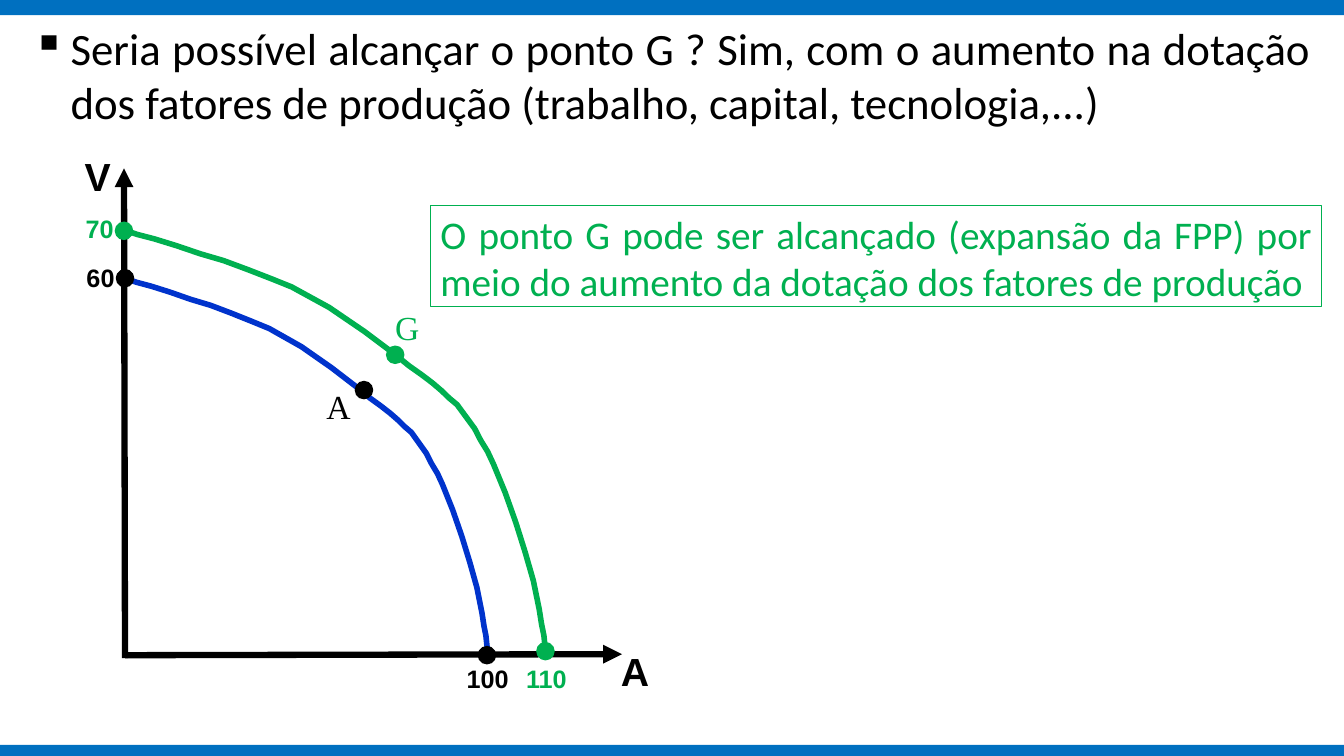
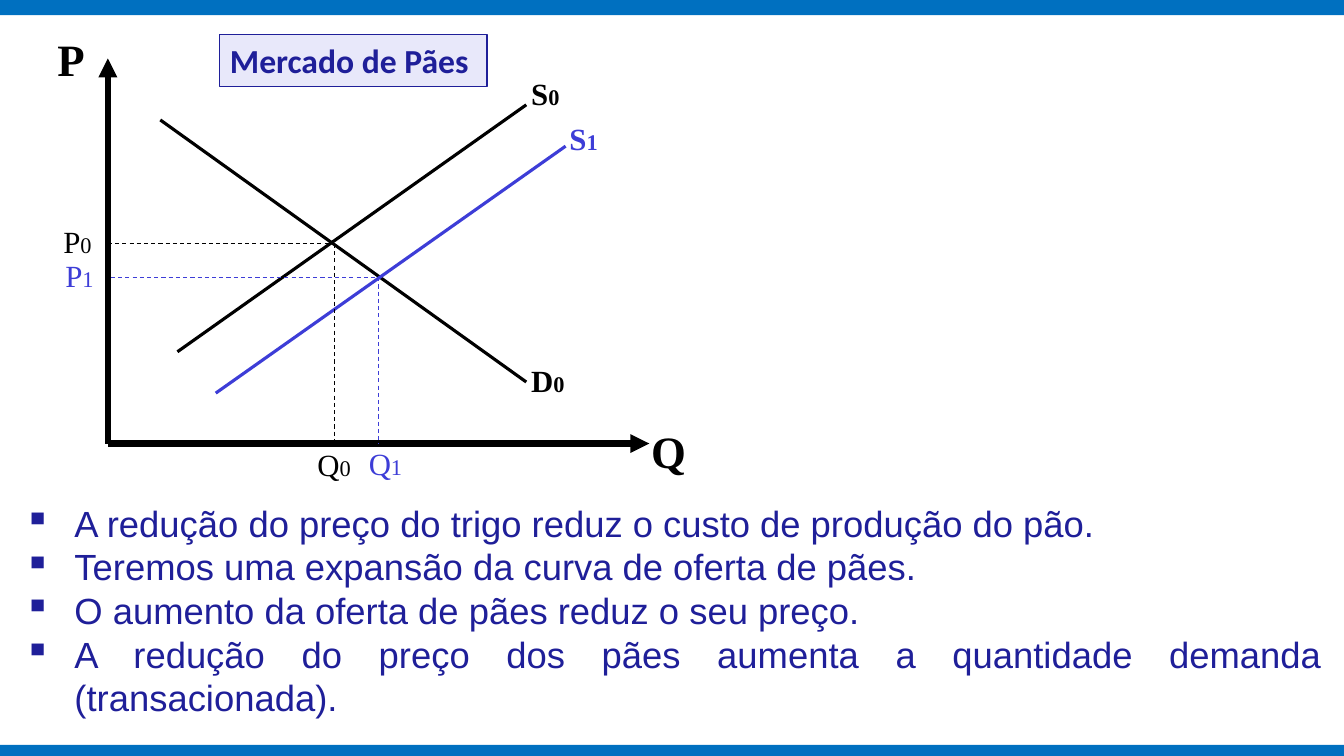
from lxml.etree import SubElement
from pptx import Presentation
from pptx.dml.color import RGBColor
from pptx.enum.dml import MSO_LINE
from pptx.enum.shapes import MSO_CONNECTOR, MSO_SHAPE
from pptx.enum.text import MSO_ANCHOR, MSO_AUTO_SIZE, PP_ALIGN
from pptx.oxml.ns import qn
from pptx.util import Inches, Pt

COLORS = {
    "band": "0070C0",
    "black": "000000",
    "green": "00B050",
    "curve": "0033CC",
    "shifted": "3D3DD7",
    "navy": "1F1F99",
    "pale": "E8E8FA",
}
SERIF = "Times New Roman"
TITLE_ONLY = 5
DOT_SIZE = 0.17

# Production frontier; the expanded one has the same outline in a larger frame.
FRONTIER = [
    (1.24, 2.76), (1.35, 2.8), (1.5, 2.84), (1.69, 2.9), (1.89, 2.97),
    (2.09, 3.03), (2.3, 3.11), (2.5, 3.19), (2.67, 3.26), (2.99, 3.44),
    (3.29, 3.65), (3.42, 3.75), (3.55, 3.85), (3.67, 3.95), (3.78, 4.03),
    (3.87, 4.1), (3.95, 4.17), (4.01, 4.23), (4.08, 4.29), (4.18, 4.43),
    (4.23, 4.5), (4.28, 4.6), (4.34, 4.7), (4.39, 4.81), (4.49, 5.06),
    (4.58, 5.32), (4.66, 5.58), (4.73, 5.83), (4.78, 6.08), (4.8, 6.21),
    (4.82, 6.31), (4.83, 6.41), (4.85, 6.49),
]


def color(name):
    return RGBColor.from_string(COLORS[name])


def paint(shape, fill=None, line=None, width=1):
    shape.shadow.inherit = False
    if fill:
        shape.fill.solid()
        shape.fill.fore_color.rgb = color(fill)
    else:
        shape.fill.background()
    if line:
        shape.line.color.rgb = color(line)
        shape.line.width = Pt(width)
    else:
        shape.line.fill.background()


def place(shape, left, top, width, height):
    shape.left, shape.top = Inches(left), Inches(top)
    shape.width, shape.height = Inches(width), Inches(height)


def add_box(page, frame, fill=None, line=None, preset=MSO_SHAPE.RECTANGLE):
    box = page.shapes.add_shape(preset, *map(Inches, frame))
    paint(box, fill, line)
    return box


def prepare_text(shape, anchor=MSO_ANCHOR.TOP):
    text = shape.text_frame
    text.word_wrap = True
    text.auto_size = MSO_AUTO_SIZE.NONE
    text.vertical_anchor = anchor
    return text


def add_span(para, words, size, font, ink, bold=False):
    span = para.add_run()
    span.text = words
    span.font.size = Pt(size)
    span.font.name = font
    span.font.bold = bold
    span.font.color.rgb = color(ink)


def add_bullet(para, indent):
    properties = para._p.get_or_add_pPr()
    properties.set("marL", str(Inches(indent)))
    properties.set("indent", str(-Inches(indent)))
    SubElement(properties, qn("a:buChar")).set("char", "▪")


def write_statement(shape, words, size, ink, anchor=MSO_ANCHOR.TOP, bold=False):
    para = prepare_text(shape, anchor).paragraphs[0]
    para.alignment = PP_ALIGN.JUSTIFY
    add_span(para, words, size, "Calibri", ink, bold)
    return para


def add_label(page, words, left, top, size, font, ink="black", bold=False,
              index=None):
    """Add a short label, with an optional smaller index after it."""
    box = page.shapes.add_textbox(Inches(left), Inches(top), Inches(0.8), Inches(0.5))
    para = prepare_text(box).paragraphs[0]
    add_span(para, words, size, font, ink, bold)
    if index:
        add_span(para, index, 16, font, ink, bold)


def add_line(page, start, end, ink="black", width=2.25, dashed=False, arrow=False):
    line = page.shapes.add_connector(
        MSO_CONNECTOR.STRAIGHT, *map(Inches, (*start, *end)))
    line.line.color.rgb = color(ink)
    line.line.width = Pt(width)
    if dashed:
        line.line.dash_style = MSO_LINE.DASH
    if arrow:
        SubElement(line.line._get_or_add_ln(), qn("a:tailEnd")).set("type", "triangle")
    SubElement(line._element.spPr, qn("a:effectLst"))


def add_axis(page, start, end):
    add_line(page, start, end, width=4.5, arrow=True)


def add_frontier(page, left, top, width, height, ink):
    """Draw the frontier stretched to the given frame."""
    (first_x, first_y), (last_x, last_y) = FRONTIER[0], FRONTIER[-1]
    points = [
        (Inches(left + (x - first_x) * width / (last_x - first_x)),
         Inches(top + (y - first_y) * height / (last_y - first_y)))
        for x, y in FRONTIER
    ]
    builder = page.shapes.build_freeform(*points[0])
    builder.add_line_segments(points[1:], close=False)
    paint(builder.convert_to_shape(), line=ink, width=4)


def add_dot(page, x, y, ink):
    frame = (x - DOT_SIZE / 2, y - DOT_SIZE / 2, DOT_SIZE, DOT_SIZE)
    add_box(page, frame, ink, ink, MSO_SHAPE.OVAL)


def add_master_bands(deck, page):
    """Make the two bands on a page and move them to the slide master."""
    tree = deck.slide_master.element.cSld.spTree
    for number, (top, height) in enumerate([(-0.03, 0.18), (7.39, 0.13)]):
        band = add_box(page, (0, top, 13.33, height), "band")
        band.name = f"Band {number + 1}"
        band.element.nvSpPr.cNvPr.set("id", str(100 + number))
        tree.append(band.element)


def build_frontier_page(page):
    place(page.shapes.title, 0.22, 0.16, 12.89, 1.26)
    para = write_statement(
        page.shapes.title,
        "Seria possível alcançar o ponto G ? Sim, com o aumento na dotação "
        "dos fatores de produção (trabalho, capital, tecnologia,...)",
        32, "black")
    add_bullet(para, 0.38)

    add_frontier(page, 1.23, 2.28, 4.2, 4.23, "green")
    add_frontier(page, 1.24, 2.76, 3.61, 3.73, "curve")
    add_axis(page, (1.24, 6.53), (1.23, 1.67))
    add_axis(page, (1.24, 6.5), (6.17, 6.49))

    for x, y, ink in [
        (1.24, 2.76, "black"), (4.83, 6.5, "black"), (3.61, 3.87, "black"),
        (1.23, 2.29, "green"), (5.41, 6.46, "green"), (3.92, 3.52, "green"),
    ]:
        add_dot(page, x, y, ink)

    for words, left, top, size, ink in [
        ("A", 6.06, 6.37, 28, "black"), ("V", 0.74, 1.46, 28, "black"),
        ("60", 0.76, 2.55, 18, "black"), ("100", 4.53, 6.53, 18, "black"),
        ("70", 0.75, 2.07, 18, "green"), ("110", 5.12, 6.53, 18, "green"),
    ]:
        add_label(page, words, left, top, size, "Arial", ink, bold=True)
    add_label(page, "G", 3.82, 3, 24, SERIF, "green")
    add_label(page, "A", 3.14, 3.78, 24, SERIF)

    answer = add_box(page, (4.27, 2.04, 8.84, 1), line="green")
    write_statement(
        answer,
        "O ponto G pode ser alcançado (expansão da FPP) por meio do aumento "
        "da dotação dos fatores de produção",
        28, "green")


def add_equilibrium(page, axis_x, x, y, ink):
    """Drop dashed guides from a crossing to both axes."""
    add_line(page, (axis_x, y), (x, y), ink, 0.75, dashed=True)
    add_line(page, (x, y), (x, 4.4), ink, 0.75, dashed=True)


def build_market_page(page):
    title = page.shapes.title
    place(title, 2.18, 0.34, 2.65, 0.52)
    title.fill.solid()
    title.fill.fore_color.rgb = color("pale")
    title.line.color.rgb = color("navy")
    title.line.width = Pt(1)
    write_statement(title, "Mercado de Pães", 24, "navy", MSO_ANCHOR.MIDDLE, bold=True)

    add_axis(page, (1.07, 4.4), (1.07, 0.58))
    add_axis(page, (1.07, 4.4), (6.44, 4.4))
    add_line(page, (1.59, 1.19), (5.22, 3.79))
    add_line(page, (1.76, 3.49), (5.22, 1.04))
    add_line(page, (2.14, 3.9), (5.61, 1.45), "shifted")
    add_equilibrium(page, 1.07, 3.32, 2.42, "black")
    add_equilibrium(page, 1.1, 3.75, 2.75, "shifted")

    add_label(page, "P", 0.47, 0.27, 32, SERIF, bold=True)
    add_label(page, "Q", 6.36, 4.15, 32, SERIF, bold=True)
    for words, index, left, top, ink, bold in [
        ("S", "0", 5.17, 0.69, "black", True),
        ("D", "0", 5.17, 3.54, "black", True),
        ("S", "1", 5.55, 1.14, "shifted", True),
        ("P", "0", 0.53, 2.16, "black", False),
        ("Q", "0", 3.05, 4.37, "black", False),
        ("P", "1", 0.55, 2.5, "shifted", False),
        ("Q", "1", 3.56, 4.36, "shifted", False),
    ]:
        add_label(page, words, left, top, 22, SERIF, ink, bold, index)

    box = page.shapes.add_textbox(*map(Inches, (0.14, 4.92, 13.08, 2.29)))
    text = prepare_text(box)
    for number, words in enumerate([
        "A redução do preço do trigo reduz o custo de produção do pão.",
        "Teremos uma expansão da curva de oferta de pães.",
        "O aumento da oferta de pães reduz o seu preço.",
        "A redução do preço dos pães aumenta a quantidade demanda (transacionada).",
    ]):
        para = text.add_paragraph() if number else text.paragraphs[0]
        para.alignment = PP_ALIGN.JUSTIFY
        add_bullet(para, 0.5)
        add_span(para, words, 26, "Arial", "navy")


def main():
    deck = Presentation()
    deck.slide_width, deck.slide_height = Inches(13.33), Inches(7.5)
    layout = deck.slide_layouts[TITLE_ONLY]
    pages = [deck.slides.add_slide(layout) for _ in range(2)]
    add_master_bands(deck, pages[0])
    build_frontier_page(pages[0])
    build_market_page(pages[1])
    deck.save("out.pptx")


if __name__ == "__main__":
    main()
